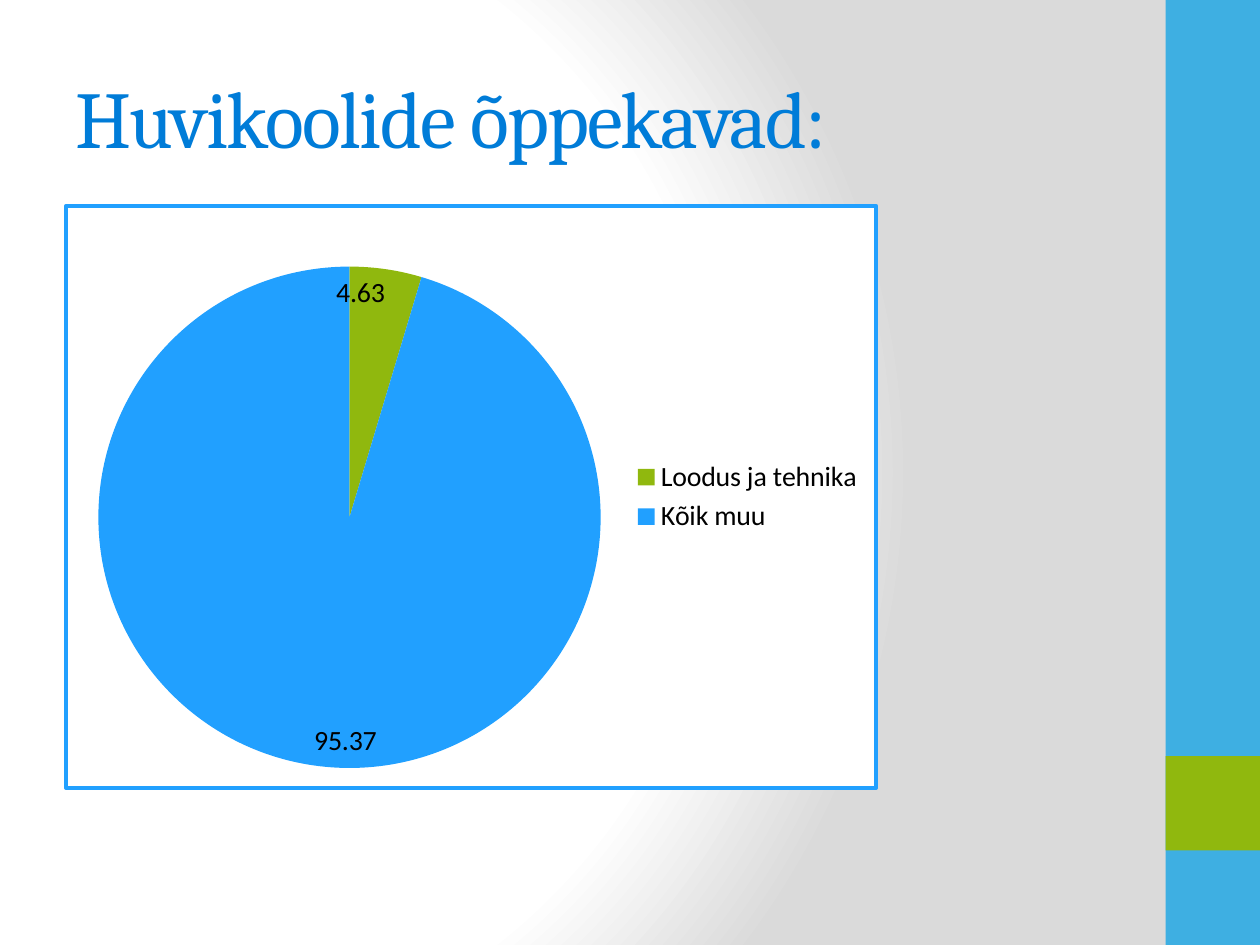
from lxml.etree import SubElement
from pptx import Presentation
from pptx.chart.data import CategoryChartData
from pptx.dml.color import RGBColor
from pptx.enum.chart import XL_CHART_TYPE, XL_LABEL_POSITION, XL_LEGEND_POSITION
from pptx.enum.shapes import MSO_SHAPE
from pptx.enum.text import MSO_ANCHOR
from pptx.oxml import parse_xml
from pptx.oxml.ns import nsdecls, qn
from pptx.util import Pt

COLORS = {
    "white": "FFFFFF",
    "grey": "DADADA",
    "band": "3EAFE2",
    "green": "90B80E",
    "blue": "21A0FF",
    "title": "007CD8",
    "black": "000000",
}
SHARES = {"Loodus ja tehnika": (4.63, "green"), "Kõik muu": (95.37, "blue")}


def rgb(name):
    return RGBColor.from_string(COLORS[name])


def set_background(slide):
    slide.background.fill.solid()
    solid = slide.element.find(".//" + qn("p:bgPr")).find(qn("a:solidFill"))
    stops = "".join(
        f'<a:gs pos="{percent * 1000}"><a:srgbClr val="{COLORS[color]}"/></a:gs>'
        for percent, color in ((0, "white"), (75, "white"), (100, "grey"))
    )
    gradient = parse_xml(
        f'<a:gradFill {nsdecls("a")} rotWithShape="1"><a:gsLst>{stops}</a:gsLst>'
        '<a:path path="circle"><a:fillToRect l="20000" t="50000" r="100000" b="50000"/>'
        "</a:path></a:gradFill>"
    )
    solid.getparent().replace(solid, gradient)


def add_block(slide, top, height, color):
    block = slide.shapes.add_shape(
        MSO_SHAPE.RECTANGLE, Pt(666), Pt(top), Pt(54), Pt(height)
    )
    block.shadow.inherit = False
    block.fill.solid()
    block.fill.fore_color.rgb = rgb(color)
    block.line.fill.background()


def add_title(slide, text):
    title = slide.shapes.add_textbox(Pt(36), Pt(21.6), Pt(600), Pt(90))
    frame = title.text_frame
    frame.word_wrap = True
    frame.vertical_anchor = MSO_ANCHOR.MIDDLE
    frame.text = text
    run = frame.paragraphs[0].runs[0]
    run.font.name = "Cambria"
    run.font.size = Pt(46)
    run.font.color.rgb = rgb("title")
    run.font._element.set("spc", "-100")


def frame_chart(chart):
    border = parse_xml(
        f'<c:spPr {nsdecls("c", "a")}>'
        f'<a:solidFill><a:srgbClr val="{COLORS["white"]}"/></a:solidFill>'
        f'<a:ln w="{Pt(2)}"><a:solidFill><a:srgbClr val="{COLORS["blue"]}"/>'
        "</a:solidFill></a:ln></c:spPr>"
    )
    chart.element.find(qn("c:chart")).addnext(border)


def place_pie(chart, **position):
    plot_area = chart.element.find(".//" + qn("c:plotArea"))
    for old in plot_area.findall(qn("c:layout")):
        plot_area.remove(old)
    layout = parse_xml(f'<c:layout {nsdecls("c")}/>')
    manual = SubElement(layout, qn("c:manualLayout"))
    settings = {"layoutTarget": "inner", "xMode": "edge", "yMode": "edge", **position}
    for tag, value in settings.items():
        SubElement(manual, qn(f"c:{tag}")).set("val", str(value))
    plot_area.insert(0, layout)


def add_pie(slide):
    data = CategoryChartData(number_format="0.00")
    data.categories = list(SHARES)
    data.add_series("Series 1", [value for value, _ in SHARES.values()])
    chart = slide.shapes.add_chart(
        XL_CHART_TYPE.PIE, Pt(36.7), Pt(116.6), Pt(465), Pt(334.8), data
    ).chart
    chart.has_title = False
    chart.font.name = "Calibri"
    chart.font.size = Pt(16)
    chart.font.color.rgb = rgb("black")
    chart.has_legend = True
    chart.legend.position = XL_LEGEND_POSITION.RIGHT
    chart.legend.include_in_layout = False

    pie = chart.plots[0]
    pie.vary_by_categories = True
    for index, (_, color) in enumerate(SHARES.values()):
        slice_fill = pie.series[0].points[index].format.fill
        slice_fill.solid()
        slice_fill.fore_color.rgb = rgb(color)
    pie.has_data_labels = True
    labels = pie.data_labels
    labels.show_value = True
    labels.show_percentage = False
    labels.number_format = "0.00"
    labels.number_format_is_linked = False
    labels.position = XL_LABEL_POSITION.INSIDE_END

    frame_chart(chart)
    place_pie(chart, x=0.04, y=0.1, w=0.62, h=0.87)


def main():
    presentation = Presentation()
    presentation.slide_width = Pt(720)
    presentation.slide_height = Pt(540)
    slide = presentation.slides.add_slide(presentation.slide_layouts[6])
    set_background(slide)
    add_block(slide, 0, 540, "band")
    add_block(slide, 432, 54, "green")
    add_title(slide, "Huvikoolide õppekavad:")
    add_pie(slide)
    presentation.save("out.pptx")


if __name__ == "__main__":
    main()
